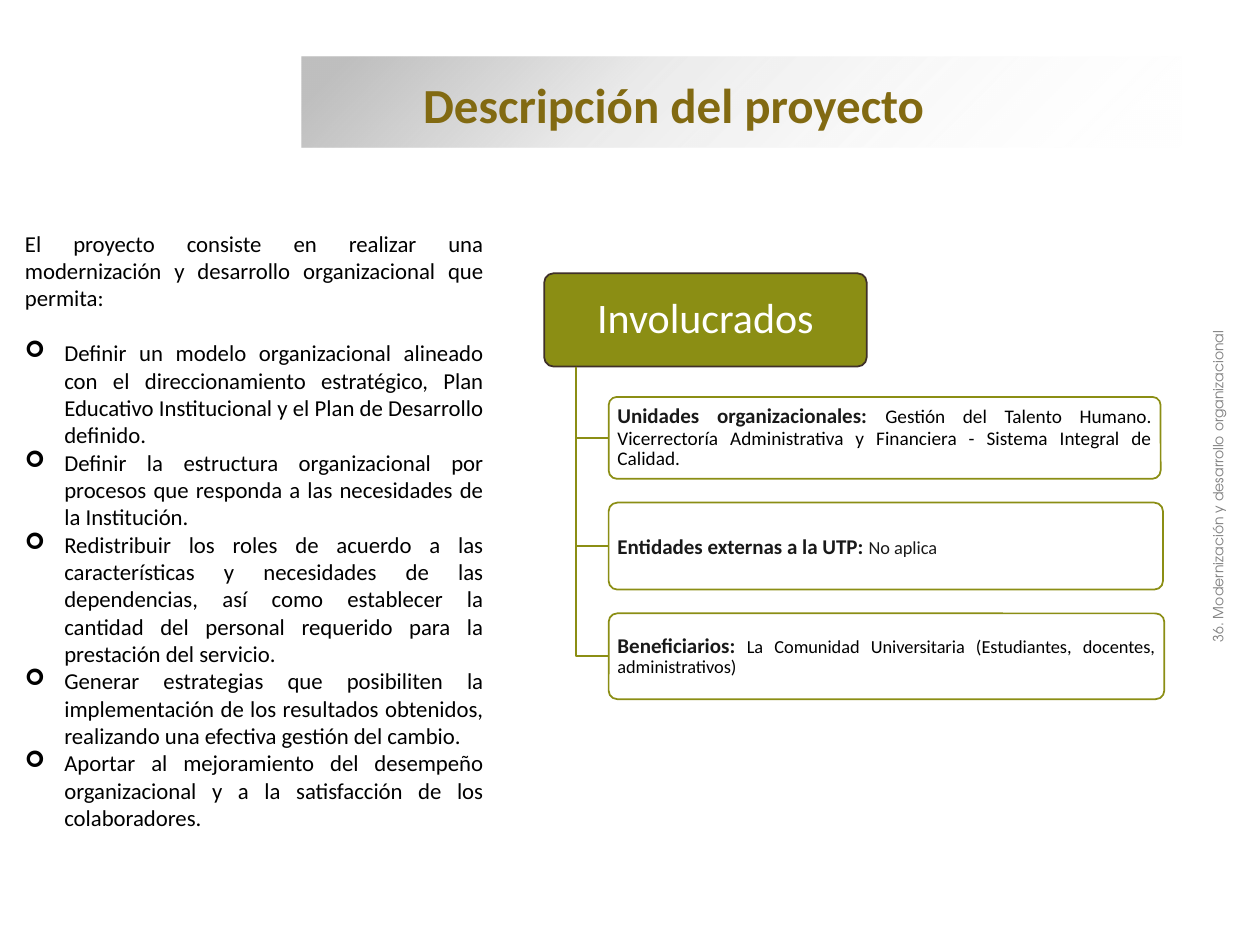
from lxml import etree
from pptx import Presentation
from pptx.dml.color import RGBColor
from pptx.enum.shapes import MSO_SHAPE
from pptx.enum.text import MSO_ANCHOR, PP_ALIGN
from pptx.oxml import parse_xml
from pptx.oxml.ns import qn
from pptx.util import Pt

RECTANGLE = MSO_SHAPE.RECTANGLE
ROUNDED = MSO_SHAPE.ROUNDED_RECTANGLE
MIDDLE, TOP = MSO_ANCHOR.MIDDLE, MSO_ANCHOR.TOP
LEFT, CENTER, JUSTIFY = PP_ALIGN.LEFT, PP_ALIGN.CENTER, PP_ALIGN.JUSTIFY

GOLD = RGBColor(0x82, 0x6A, 0x12)
OLIVE = RGBColor(0x8B, 0x8E, 0x14)
BROWN = RGBColor(0x3F, 0x30, 0x29)
WHITE = RGBColor(0xFF, 0xFF, 0xFF)
BLACK = RGBColor(0x00, 0x00, 0x00)
CHARCOAL = RGBColor(0x19, 0x19, 0x19)
GRAY = RGBColor(0x80, 0x80, 0x80)

BANNER_FILL = """
<a:gradFill xmlns:a="http://schemas.openxmlformats.org/drawingml/2006/main">
  <a:gsLst>
    <a:gs pos="5000"><a:srgbClr val="BFBFBF"/></a:gs>
    <a:gs pos="37000"><a:srgbClr val="BFBFBF"><a:alpha val="31000"/></a:srgbClr></a:gs>
    <a:gs pos="100000"><a:srgbClr val="FFFFFF"><a:alpha val="0"/></a:srgbClr></a:gs>
  </a:gsLst>
  <a:lin ang="2700000" scaled="0"/>
</a:gradFill>
"""


def write_runs(paragraph, alignment, runs, name="Calibri"):
    paragraph.alignment = alignment
    for text, size, color, bold in runs:
        run = paragraph.add_run()
        run.text = text
        for attribute, value in {"name": name, "size": Pt(size), "bold": bold}.items():
            setattr(run.font, attribute, value)
        run.font.color.rgb = color


def format_frame(shape, anchor, horizontal=7.2, vertical=3.6):
    formats = {
        "word_wrap": True,
        "vertical_anchor": anchor,
        "margin_left": Pt(horizontal),
        "margin_right": Pt(horizontal),
        "margin_top": Pt(vertical),
        "margin_bottom": Pt(vertical),
    }
    for attribute, value in formats.items():
        setattr(shape.text_frame, attribute, value)
    return shape.text_frame


presentation = Presentation()
presentation.slide_width = Pt(720)
presentation.slide_height = Pt(540)
slide = presentation.slides.add_slide(presentation.slide_layouts[6])
shapes = slide.shapes

banner = shapes.add_shape(RECTANGLE, Pt(172.5), Pt(32.4), Pt(502.6), Pt(52))
banner.shadow.inherit = False
banner.line.fill.background()
banner.fill.background()
properties = banner.fill._xPr
properties.replace(properties.find(qn("a:noFill")), parse_xml(BANNER_FILL))

title = shapes.add_textbox(Pt(234.7), Pt(39), Pt(446.4), Pt(41))
frame = format_frame(title, MIDDLE)
write_runs(frame.paragraphs[0], LEFT, [("Descripción del proyecto", 28, GOLD, True)])

header = shapes.add_shape(ROUNDED, Pt(311), Pt(156.2), Pt(184.3), Pt(53.3))
header.shadow.inherit = False
header.adjustments[0] = 0.1
header.fill.solid()
header.fill.fore_color.rgb = OLIVE
header.line.color.rgb = BROWN
header.line.width = Pt(1)
frame = format_frame(header, MIDDLE, 5, 3.6)
frame.paragraphs[0].line_spacing = 0.9
write_runs(frame.paragraphs[0], CENTER, [("Involucrados", 24, WHITE, False)])

trunk_left, trunk_top, box_left, box_gap = 329, 209.5, 347.8, 13.6
groups = [
    (315.4, 46.8, 0.9, [
        ("Unidades organizacionales: ", 12, CHARCOAL, True),
        ("Gestión del Talento Humano. Vicerrectoría Administrativa y Financiera"
         " - Sistema Integral de Calidad.", 11, BLACK, False),
    ]),
    (316.8, 49.7, 1.0, [
        ("Entidades externas a la UTP: ", 12, CHARCOAL, True),
        ("No aplica", 10.5, CHARCOAL, False),
    ]),
    (317.5, 49, 0.9, [
        ("Beneficiarios:", 12, CHARCOAL, True),
        (" ", 10.5, CHARCOAL, True),
        ("La Comunidad Universitaria (Estudiantes, docentes, administrativos)",
         10.5, BLACK, False),
    ]),
]
box_top = 226.8
for width, height, spacing, runs in groups:
    middle = box_top + height / 2
    builder = shapes.build_freeform(Pt(trunk_left), Pt(trunk_top))
    builder.add_line_segments(
        [(Pt(trunk_left), Pt(middle)), (Pt(box_left), Pt(middle))], close=False)
    branch = builder.convert_to_shape()
    branch.fill.background()

    box = shapes.add_shape(ROUNDED, Pt(box_left), Pt(box_top), Pt(width), Pt(height))
    box.adjustments[0] = 0.1
    box.fill.solid()
    box.fill.fore_color.rgb = WHITE
    color = box.fill._xPr.find(qn("a:solidFill"))[0]
    etree.SubElement(color, qn("a:alpha"), val="90000")
    for shape in (branch, box):
        shape.shadow.inherit = False
        shape.line.color.rgb = OLIVE
        shape.line.width = Pt(1)
    frame = format_frame(box, MIDDLE, 3.6, 2.9)
    frame.paragraphs[0].line_spacing = spacing
    write_runs(frame.paragraphs[0], JUSTIFY, runs)
    box_top += height + box_gap

goals = [
    "Definir un modelo organizacional alineado con el direccionamiento estratégico, "
    "Plan Educativo Institucional y el Plan de Desarrollo definido.",
    "Definir la estructura organizacional por procesos que responda a las necesidades "
    "de la Institución.",
    "Redistribuir los roles de acuerdo a las características y necesidades de las "
    "dependencias, así como establecer la cantidad del personal requerido para la "
    "prestación del servicio.",
    "Generar estrategias que posibiliten la implementación de los resultados obtenidos, "
    "realizando una efectiva gestión del cambio.",
    "Aportar al mejoramiento del desempeño organizacional y a la satisfacción de los "
    "colaboradores.",
]
description = shapes.add_textbox(Pt(7.2), Pt(127.5), Pt(275.8), Pt(353.5))
frame = format_frame(description, TOP)
introduction = ("El proyecto consiste en realizar una modernización y desarrollo "
                "organizacional que permita:")
write_runs(frame.paragraphs[0], JUSTIFY, [(introduction, 13, BLACK, False)])
for index, goal in enumerate(goals):
    paragraph = frame.add_paragraph()
    if index == 0:
        paragraph.space_before = Pt(15.8)
    paragraph_properties = paragraph._p.get_or_add_pPr()
    paragraph_properties.set("marL", str(Pt(22.5)))
    paragraph_properties.set("indent", str(-Pt(22.5)))
    etree.SubElement(paragraph_properties, qn("a:buFont"), typeface="Wingdings")
    etree.SubElement(paragraph_properties, qn("a:buChar"), char="➢")
    write_runs(paragraph, JUSTIFY, [(goal, 13, BLACK, False)])

side_label = shapes.add_textbox(Pt(522), Pt(269.3), Pt(348.5), Pt(17.3))
side_label.rotation = 270
frame = format_frame(side_label, TOP)
write_runs(frame.paragraphs[0], CENTER,
           [("36. Modernización y desarrollo organizacional", 8, GRAY, False)],
           "TeX Gyre Adventor")

presentation.save("out.pptx")
